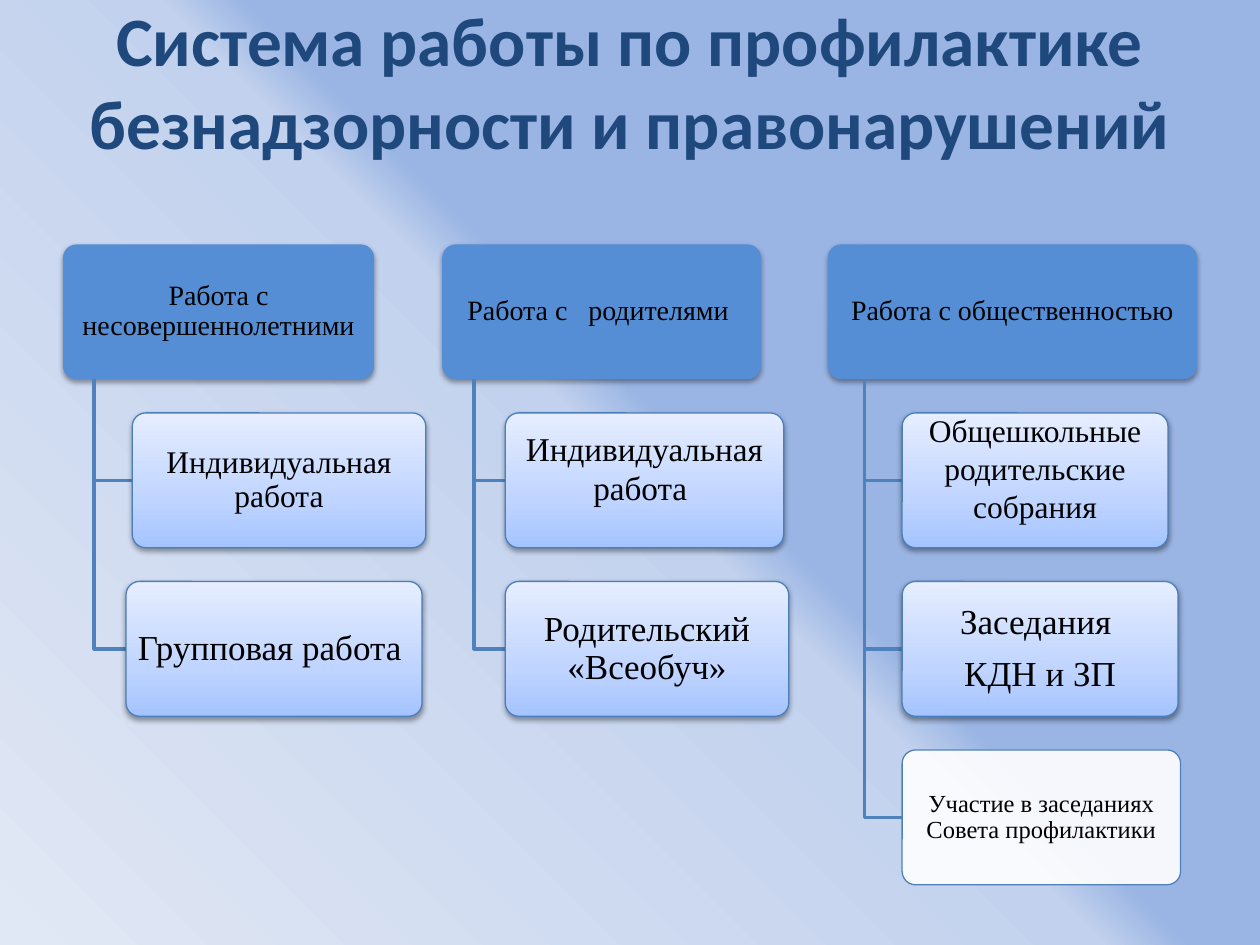
from lxml import etree
from pptx import Presentation
from pptx import util as u
from pptx.dml.color import RGBColor
from pptx.enum import shapes, text
from pptx.oxml.ns import qn


def rgb(value):
    return RGBColor.from_string(value)


def gradient(fill, owner, angle, stops):
    fill.gradient()
    fill.gradient_angle = angle
    lst = next(owner.iter(qn("a:gsLst")))
    for old in list(lst):
        lst.remove(old)
    for pos, value in stops:
        gs = etree.SubElement(lst, qn("a:gs"), pos=str(pos * 1000))
        etree.SubElement(gs, qn("a:srgbClr"), val=value)


prs = Presentation()
prs.slide_width, prs.slide_height = u.Inches(10), u.Inches(7.5)
s = prs.slides.add_slide(prs.slide_layouts[6])
gradient(s.background.fill, s._element, 225,
         [(46, "9AB5E4"), (50, "C2D1ED"), (100, "E1E8F5")])

title = s.shapes.add_textbox(u.Inches(0.5), u.Inches(0.3), u.Inches(9), u.Inches(1.25))
tf = title.text_frame
frame = {"word_wrap": True, "vertical_anchor": text.MSO_ANCHOR.MIDDLE,
         "margin_bottom": u.Inches(0.62)}
for key, value in frame.items():
    setattr(tf, key, value)
p = tf.paragraphs[0]
p.alignment = text.PP_ALIGN.CENTER
r = p.add_run()
r.text = "Система работы по профилактике безнадзорности и правонарушений"
for key, value in {"name": "Calibri", "size": u.Pt(39.6), "bold": True}.items():
    setattr(r.font, key, value)
r.font.color.rgb = rgb("1F497D")

TOP, HEIGHT = 1.94, 1.07
PITCH = HEIGHT * 1.25
columns = [
    [(0.5, 2.47, 16, "Работа с несовершеннолетними", "head"),
     (1.05, 2.33, 18, "Индивидуальная работа", "step"),
     (1, 2.35, 20, "Групповая работа ", "step")],
    [(3.51, 2.53, 16, "Работа с   родителями ", "head"),
     (4.01, 2.21, 19, "Индивидуальная работа ", "raised"),
     (4.01, 2.25, 20, "Родительский «Всеобуч»", "step")],
    [(6.57, 2.93, 16, "Работа с общественностью", "head"),
     (7.16, 2.11, 18, "Общешкольные родительские собрания", "raised"),
     (7.16, 2.19, 20, "Заседания \nКДН и ЗП", "step"),
     (7.16, 2.21, 14, "Участие в заседаниях Совета профилактики", "plain")],
]
insets = {"head": (0.03, 0.02, 0.02), "step": (0.04, 0.03, 0.03),
          "raised": (0.04, 0.03, 0.23), "plain": (0.03, 0.02, 0.02)}

for column in columns:
    trunk = column[0][0] + column[0][1] / 10
    for row, (x, w, size, words, kind) in enumerate(column):
        y = TOP + row * PITCH
        if row:
            mid = y + HEIGHT / 2
            fb = s.shapes.build_freeform(u.Inches(trunk), u.Inches(TOP + HEIGHT))
            fb.add_line_segments([(u.Inches(trunk), u.Inches(mid)),
                                  (u.Inches(x), u.Inches(mid))], close=False)
            sp = fb.convert_to_shape()
            sp.shadow.inherit = False
            sp.fill.background()
            sp.line.color.rgb = rgb("4F81BD")
            sp.line.width = u.Pt(2)

        sp = s.shapes.add_shape(shapes.MSO_SHAPE.ROUNDED_RECTANGLE, u.Inches(x),
                                u.Inches(y), u.Inches(w), u.Inches(HEIGHT))
        sp.adjustments[0] = 0.1
        sp.shadow.inherit = False
        if kind == "head":
            sp.fill.solid()
            sp.fill.fore_color.rgb = rgb("558ED5")
            sp.line.fill.background()
        elif kind == "plain":
            sp.fill.solid()
            sp.fill.fore_color.rgb = rgb("FFFFFF")
            clr = next(sp._element.spPr.iter(qn("a:srgbClr")))
            etree.SubElement(clr, qn("a:alpha"), val="90000")
        else:
            gradient(sp.fill, sp._element, 90,
                     [(0, "A4C4FF"), (35, "BFD4FF"), (100, "E6EEFF")])
        if kind != "head":
            sp.line.color.rgb = rgb("4F81BD" if kind == "plain" else "4B7EBC")
            sp.line.width = u.Pt(0.75)
        if kind != "plain":
            effects = sp._element.spPr.find(qn("a:effectLst"))
            shadow = etree.SubElement(effects, qn("a:outerShdw"), blurRad="40000",
                                      dist="20000", dir="5400000", rotWithShape="0")
            clr = etree.SubElement(shadow, qn("a:srgbClr"), val="000000")
            etree.SubElement(clr, qn("a:alpha"), val="38000")

        side, top, bottom = insets[kind]
        tf = sp.text_frame
        frame = {"word_wrap": True, "vertical_anchor": text.MSO_ANCHOR.MIDDLE,
                 "margin_left": u.Inches(side), "margin_right": u.Inches(side),
                 "margin_top": u.Inches(top), "margin_bottom": u.Inches(bottom)}
        for key, value in frame.items():
            setattr(tf, key, value)
        tf.text = words
        para = {"alignment": text.PP_ALIGN.CENTER, "space_after": u.Pt(size * 0.4),
                "line_spacing": 1.0 if kind == "raised" else 0.9}
        for p in tf.paragraphs:
            for key, value in para.items():
                setattr(p, key, value)
            font = p.runs[0].font
            for key, value in {"name": "Times New Roman", "size": u.Pt(size)}.items():
                setattr(font, key, value)
            font.color.rgb = rgb("000000")

prs.save("out.pptx")
